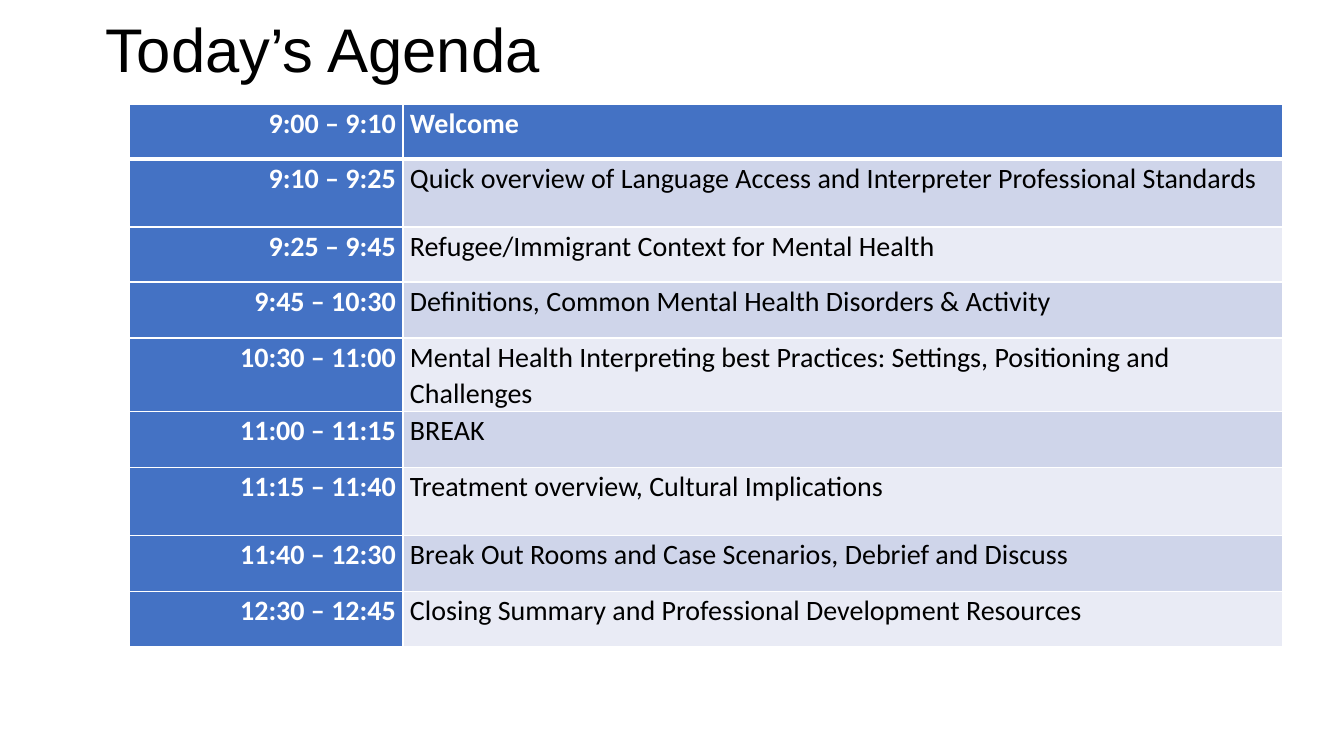
from lxml import etree
from pptx import Presentation
from pptx import util as u
from pptx.dml.color import RGBColor
from pptx.enum import text
from pptx.oxml import ns

INK = {"blue": "4472C4", "dark": "CFD5EA", "pale": "E9EBF5",
       "white": "FFFFFF", "black": "000000"}
AGENDA = [
    ("9:00 – 9:10", "Welcome", 55),
    ("9:10 – 9:25", "Quick overview of Language Access and Interpreter Professional Standards", 68),
    ("9:25 – 9:45", "Refugee/Immigrant Context for Mental Health", 55),
    ("9:45 – 10:30", "Definitions, Common Mental Health Disorders & Activity", 56),
    ("10:30 – 11:00", "Mental Health Interpreting best Practices: Settings, Positioning and Challenges", 73),
    ("11:00 – 11:15", "BREAK", 56),
    ("11:15 – 11:40", "Treatment overview, Cultural Implications", 68),
    ("11:40 – 12:30", "Break Out Rooms and Case Scenarios, Debrief and Discuss", 56),
    ("12:30 – 12:45", "Closing Summary and Professional Development Resources", 55),
]


def px(n):
    return u.Emu(round(n * 914400 / 100.8))


class Deck:
    def __init__(self):
        self.prs = Presentation()
        self.prs.slide_width, self.prs.slide_height = px(1344), px(756)
        self.slide = self.prs.slides.add_slide(self.prs.slide_layouts[5])

    def label(self, para, words, font, size, ink, bold, align, space):
        para.alignment = align
        para.line_spacing = space
        run = para.add_run()
        run.text = words
        run.font.name, run.font.size, run.font.bold = font, u.Pt(size), bold
        run.font.color.rgb = RGBColor.from_string(INK[ink])

    def title(self, words, left, top, wide, high, inset):
        box = self.slide.shapes.title
        box.left, box.top, box.width, box.height = map(px, (left, top, wide, high))
        frame = box.text_frame
        frame.auto_size = text.MSO_AUTO_SIZE.NONE
        frame.vertical_anchor = text.MSO_ANCHOR.MIDDLE
        frame.margin_left = px(inset)
        frame.margin_top = frame.margin_right = frame.margin_bottom = px(5)
        self.label(frame.paragraphs[0], words, "Arial", 44, "black", False,
                   text.PP_ALIGN.LEFT, 0.9)

    def edge(self, cell, widths):
        props = cell._tc.get_or_add_tcPr()
        for i, (side, width) in enumerate(zip("LRTB", widths)):
            line = etree.Element(ns.qn("a:ln" + side), w=str(u.Pt(width)))
            fill = etree.SubElement(line, ns.qn("a:solidFill"))
            etree.SubElement(fill, ns.qn("a:srgbClr"), val=INK["white"])
            props.insert(i, line)

    def cell(self, cell, words, fill, ink, bold, align):
        cell.margin_left = cell.margin_right = px(7)
        cell.margin_top = cell.margin_bottom = 0
        cell.fill.solid()
        cell.fill.fore_color.rgb = RGBColor.from_string(INK[fill])
        self.label(cell.text_frame.paragraphs[0], words, "Calibri", 20, ink,
                   bold, align, 1.07)

    def table(self, items, left, top, cols):
        high = sum(item[2] for item in items)
        grid = self.slide.shapes.add_table(
            len(items), len(cols), px(left), px(top), px(sum(cols)), px(high)).table
        grid.horz_banding = False
        for col, wide in zip(grid.columns, cols):
            col.width = px(wide)
        for r, (time, topic, tall) in enumerate(items):
            grid.rows[r].height = px(tall)
            for c, words in enumerate((time, topic)):
                head = r == 0 or c == 0
                fill = "blue" if head else "dark" if r % 2 else "pale"
                align = text.PP_ALIGN.LEFT if c else text.PP_ALIGN.RIGHT
                cell = grid.cell(r, c)
                self.cell(cell, words, fill, "white" if head else "black", head, align)
                self.edge(cell, (1, 1, 3 if r == 1 else 1, 3 if r == 0 else 1))


def main():
    deck = Deck()
    deck.title("Today’s Agenda", 0, 1, 1344, 104, 106)
    deck.table(AGENDA, 129, 104, (274, 880))
    deck.prs.save("out.pptx")


if __name__ == "__main__":
    main()
